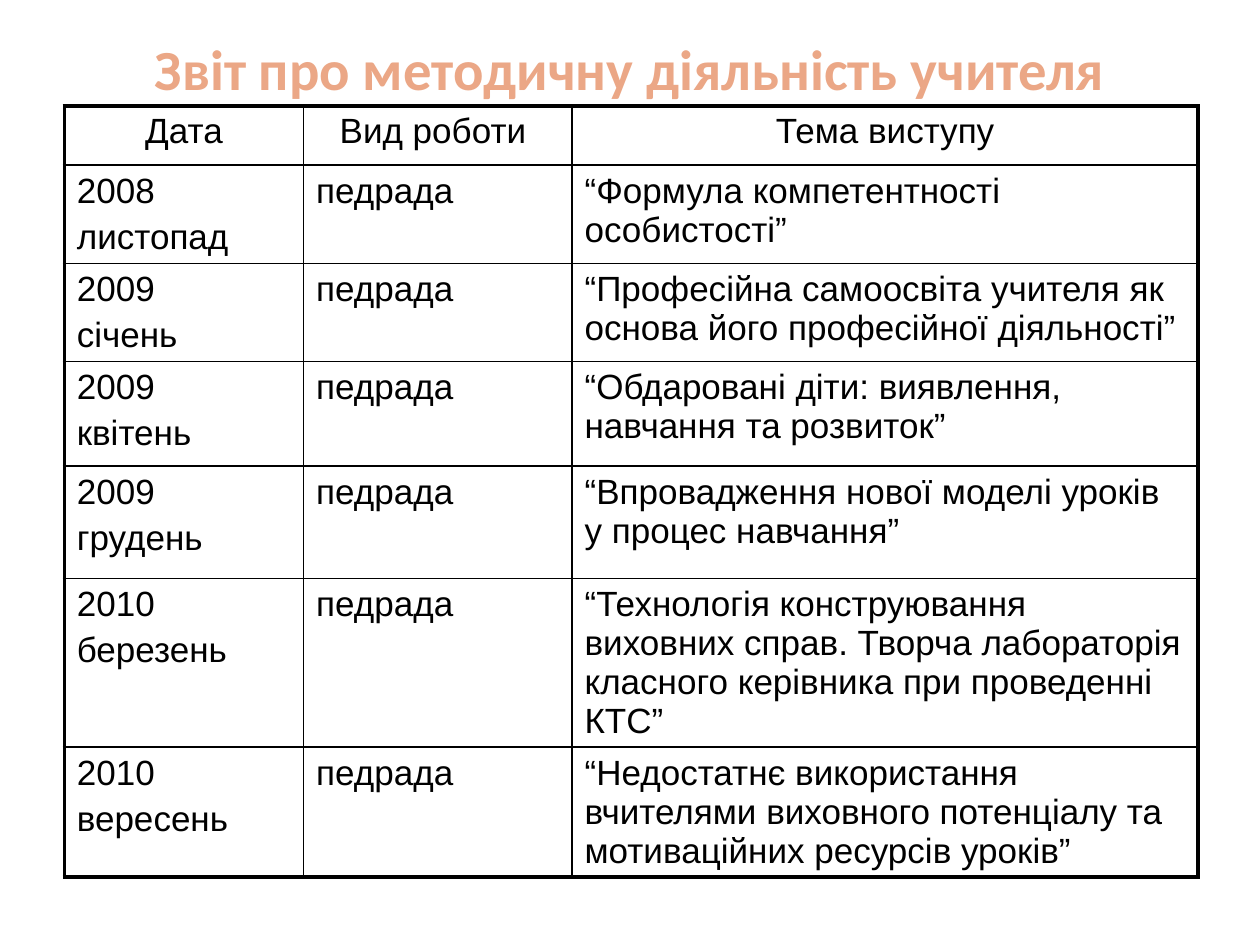
from typing import NamedTuple

from lxml import etree
from pptx import Presentation
from pptx.dml import color
from pptx.enum import text
from pptx.oxml import ns
from pptx.util import Inches, Pt

BLACK = "000000"
THIN, THICK = 1, 2.25
COL_WIDTHS = (1.9, 2.13, 4.97)
HEADINGS = ("Дата", "Вид роботи ", "Тема виступу")


class Talk(NamedTuple):
    year: str
    month: str
    topic: str
    height: float
    kind: str = "педрада"


TALKS = (
    Talk("2008", "листопад", "“Формула компетентності особистості”", 0.78),
    Talk("2009", "січень", "“Професійна самоосвіта учителя як основа його професійної діяльності”", 0.78),
    Talk("2009", "квітень", "“Обдаровані діти: виявлення, навчання та розвиток”", 0.83),
    Talk("2009", "грудень", "“Впровадження нової моделі уроків у процес навчання”", 0.89),
    Talk("2010", "березень", "“Технологія конструювання виховних справ. Творча лабораторія "
         "класного керівника при проведенні КТС”", 1.34),
    Talk("2010", "вересень", "“Недостатнє використання вчителями виховного потенціалу "
         "та мотиваційних ресурсів уроків”", 1.03),
)


def rgb(value: str) -> color.RGBColor:
    return color.RGBColor.from_string(value)


def write(tf, content: str, *, size: float, font: str = "Arial", fill: str = BLACK,
          bold: bool = False, align=text.PP_ALIGN.LEFT, before: float = 0) -> None:
    for i, line in enumerate(content.split("\n")):
        p = tf.add_paragraph() if i else tf.paragraphs[0]
        p.alignment = align
        p.space_before = Pt(before)
        r = p.add_run()
        r.text = line
        r.font.size = Pt(size)
        r.font.name = font
        r.font.bold = bold
        r.font.color.rgb = rgb(fill)


def set_borders(cell, widths: dict[str, float]) -> None:
    tc_pr = cell._tc.get_or_add_tcPr()
    for i, (side, width) in enumerate(widths.items()):
        ln = etree.Element(ns.qn(f"a:ln{side}"), w=str(Pt(width)))
        fill = etree.SubElement(ln, ns.qn("a:solidFill"))
        etree.SubElement(fill, ns.qn("a:srgbClr"), val=BLACK)
        tc_pr.insert(i, ln)


def add_title(s, content: str) -> None:
    sp = s.shapes.title
    sp.left, sp.top, sp.width, sp.height = Inches(0.5), Inches(0), Inches(9), Inches(1.07)
    sp.text_frame.vertical_anchor = text.MSO_ANCHOR.MIDDLE
    write(sp.text_frame, content, size=32.4, font="Calibri", fill="EBA786",
          bold=True, align=text.PP_ALIGN.CENTER)


def add_talks(s, talks: tuple[Talk, ...]) -> None:
    rows = [HEADINGS] + [(f"{t.year}\n{t.month}", t.kind, t.topic) for t in talks]
    heights = [0.47] + [t.height for t in talks]
    table = s.shapes.add_table(len(rows), len(COL_WIDTHS), Inches(0.51), Inches(0.84),
                               Inches(sum(COL_WIDTHS)), Inches(sum(heights))).table
    table.first_row = table.horz_banding = False
    for column, width in zip(table.columns, COL_WIDTHS):
        column.width = Inches(width)
    last_row, last_col = len(rows) - 1, len(COL_WIDTHS) - 1
    for i, (row, height) in enumerate(zip(rows, heights)):
        table.rows[i].height = Inches(height)
        align = text.PP_ALIGN.LEFT if i else text.PP_ALIGN.CENTER
        for j, content in enumerate(row):
            cell = table.cell(i, j)
            cell.fill.background()
            write(cell.text_frame, content, size=20, align=align, before=4)
            outer = {"L": j == 0, "R": j == last_col, "T": i == 0, "B": i == last_row}
            set_borders(cell, {side: THICK if edge else THIN for side, edge in outer.items()})


def main() -> None:
    prs = Presentation()
    prs.slide_width, prs.slide_height = Inches(10), Inches(7.5)
    s = prs.slides.add_slide(prs.slide_layouts[5])
    add_title(s, "Звіт про методичну діяльність учителя")
    add_talks(s, TALKS)
    prs.save("out.pptx")


if __name__ == "__main__":
    main()
